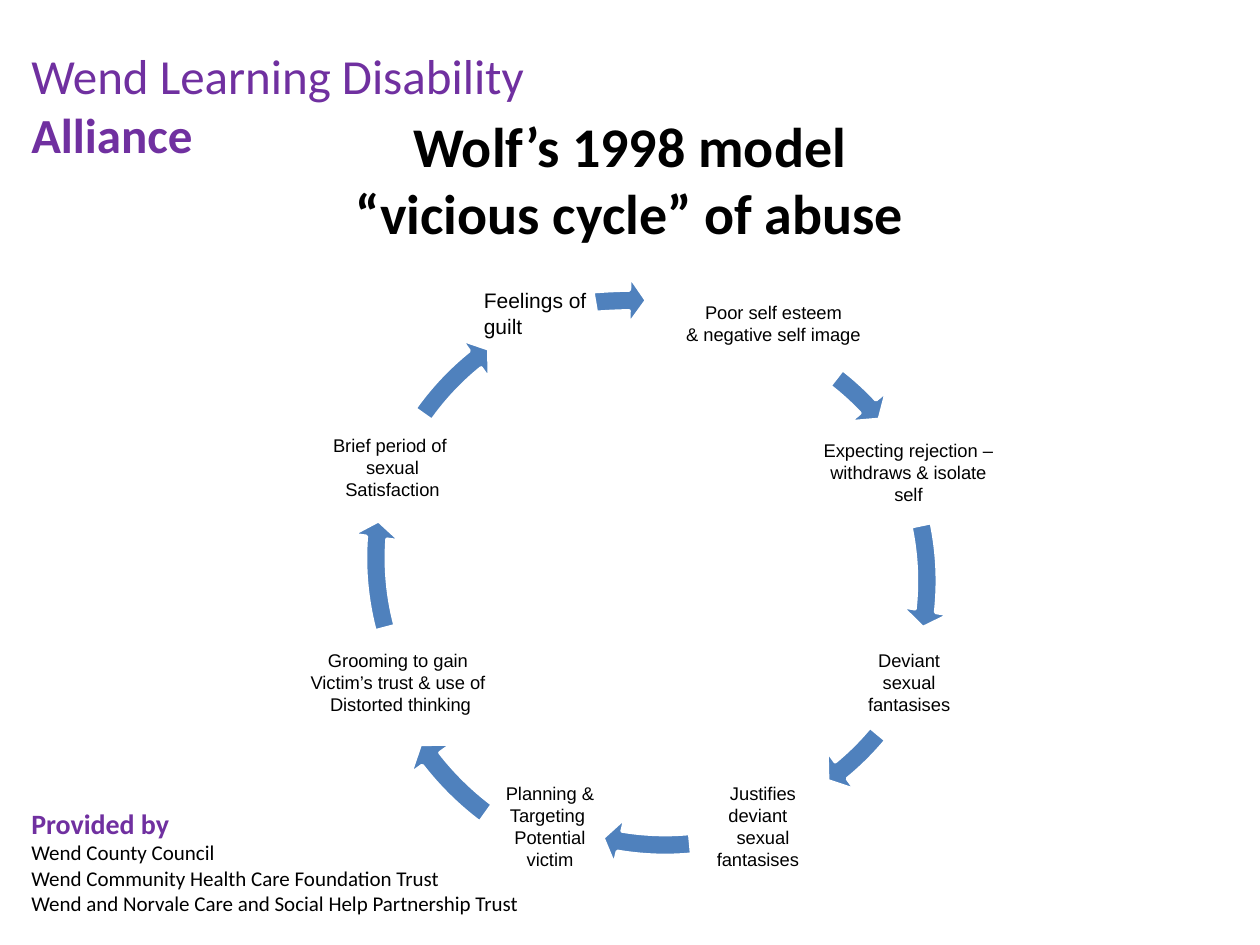
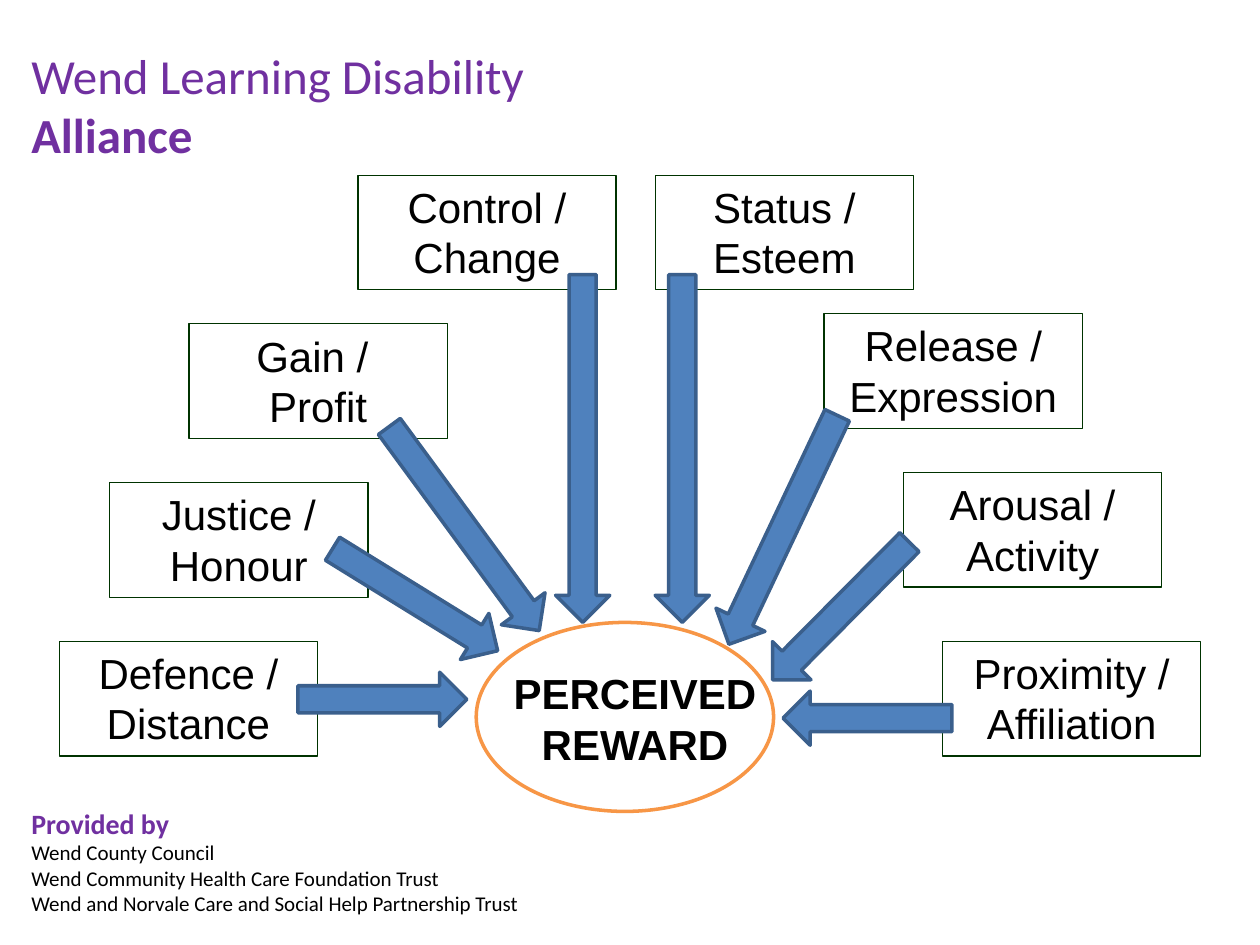
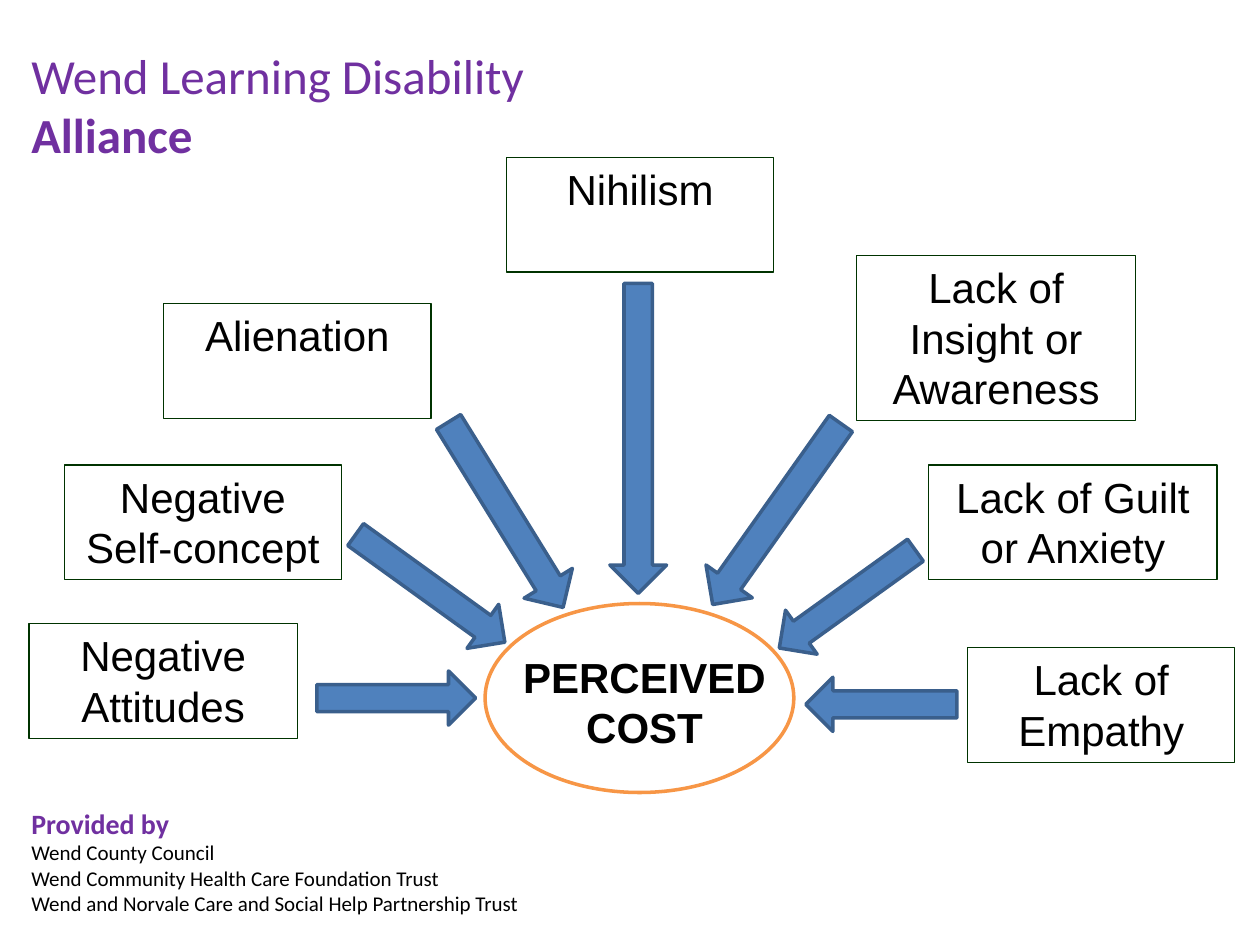
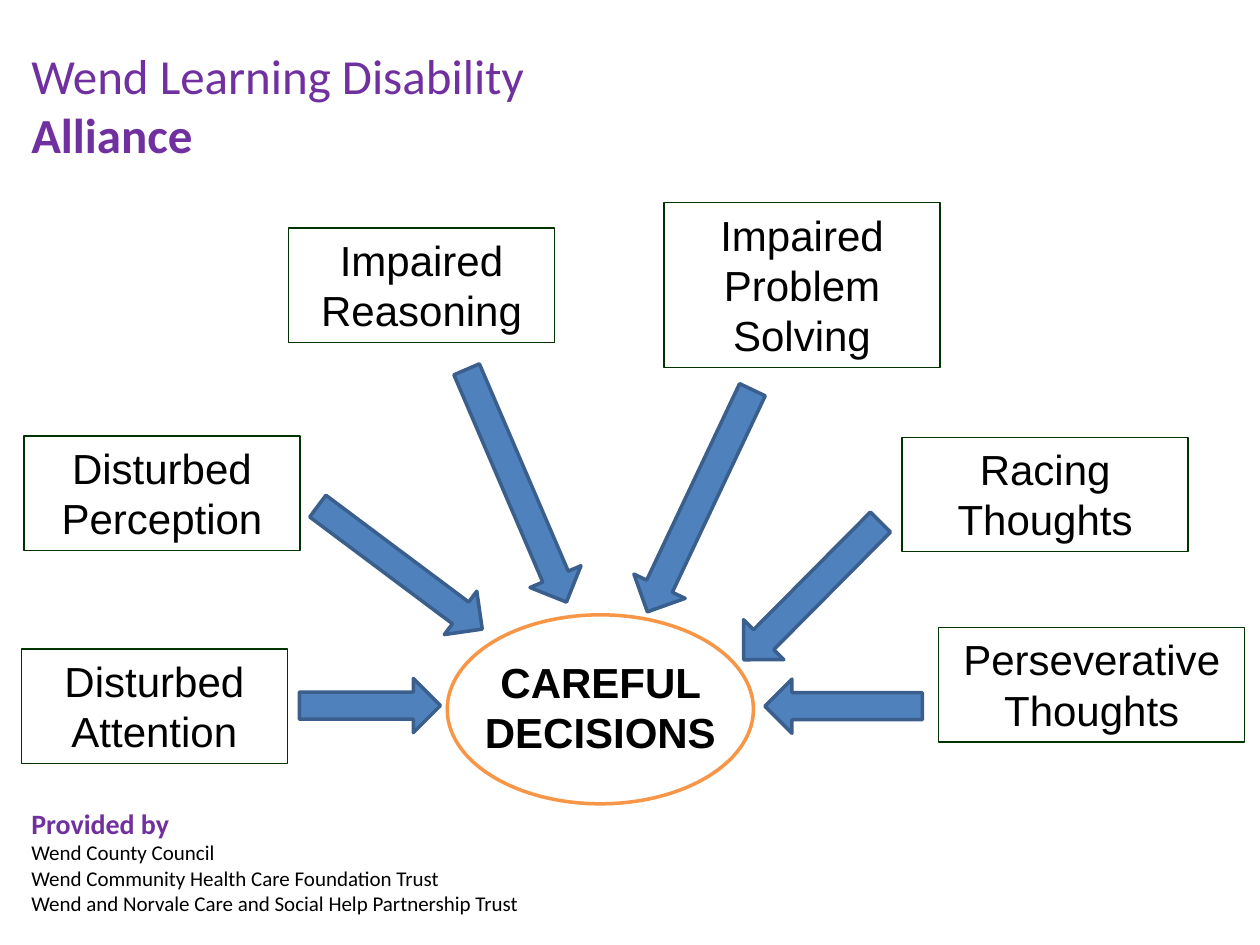
from dataclasses import dataclass

from pptx import Presentation
from pptx.dml.color import RGBColor
from pptx.enum.shapes import MSO_SHAPE
from pptx.enum.text import MSO_ANCHOR, MSO_AUTO_SIZE, PP_ALIGN
from pptx.presentation import Presentation as Deck
from pptx.shapes.autoshape import Shape
from pptx.slide import Slide
from pptx.text.text import TextFrame, _Paragraph
from pptx.util import Inches, Pt

LEFT, CENTER = PP_ALIGN.LEFT, PP_ALIGN.CENTER
TOP, MIDDLE = MSO_ANCHOR.TOP, MSO_ANCHOR.MIDDLE
NO_AUTOFIT = MSO_AUTO_SIZE.NONE
RECTANGLE, OVAL = MSO_SHAPE.RECTANGLE, MSO_SHAPE.OVAL
DOWN_ARROW, CIRCULAR_ARROW = MSO_SHAPE.DOWN_ARROW, MSO_SHAPE.CIRCULAR_ARROW

HEADING_FONT, BODY_FONT = "Calibri", "Arial"
PURPLE, BLACK, WHITE = "7030A0", "000000", "FFFFFF"
BLUE, DARK_BLUE = "4F81BD", "3A5F8C"
GREEN, ORANGE = "003300", "F79646"

TITLE_ONLY, BLANK = 5, 6
PROVIDERS = (
    "Wend County Council",
    "Wend Community Health Care Foundation Trust",
    "Wend and Norvale Care and Social Help Partnership Trust",
)


@dataclass(frozen=True)
class Step:
    """One stage of the cycle; each line is a paragraph."""
    lines: tuple[str, ...]
    left: float
    top: float
    width: float
    height: float = 0.85
    size: float = 10.5
    align: PP_ALIGN = CENTER


@dataclass(frozen=True)
class CycleArrow:
    """Arc whose head and tail angles are in adjustment units (0.6 per degree)."""
    left: float
    top: float
    head: float
    tail: float
    width: float = 4.72
    height: float = 4.72


@dataclass(frozen=True)
class Factor:
    lines: tuple[str, ...]
    left: float
    top: float
    width: float
    height: float = 0.91


@dataclass(frozen=True)
class Arrow:
    """Down arrow, turned clockwise about its middle."""
    left: float
    top: float
    length: float
    rotation: float = 0
    width: float = 0.43


@dataclass(frozen=True)
class Hub:
    """Central outcome: an ellipse and a label laid over it."""
    text: str
    label_left: float
    label_top: float
    label_width: float
    left: float
    top: float
    width: float


@dataclass(frozen=True)
class Diagram:
    hub: Hub
    factors: tuple[Factor, ...]
    arrows: tuple[Arrow, ...]


STEPS = (
    Step(("Poor self esteem ", "& negative self image "), 5.26, 2.14, 1.8),
    Step(("Expecting rejection – withdraws & isolate self",), 6.47, 3.32, 1.48),
    Step(("Deviant sexual fantasises",), 6.79, 4.99, 0.85),
    Step((" Justifies deviant ", " sexual fantasises "), 5.49, 6.13, 1.09),
    Step(("Planning &", "Targeting ", "Potential", "victim"), 3.94, 6.13, 0.85),
    Step(("Grooming to gain ", "Victim’s trust & use of ", "Distorted thinking"),
         2.41, 4.99, 1.54),
    Step(("Brief period of ", "sexual", "Satisfaction"), 2.27, 3.28, 1.69),
    Step(("Feelings of guilt",), 3.82, 2.27, 0.9, 0.43, 12, LEFT),
)
CYCLE_ARROWS = (
    CycleArrow(2.95, 2.35, 190.06, 184.66),
    CycleArrow(2.83, 2.25, 3.75, 208.88),
    CycleArrow(2.94, 2.08, 30.33, 23.8),
    CycleArrow(2.92, 2.18, 59.76, 50.8),
    CycleArrow(2.72, 2.02, 84.42, 75.29, 4.97, 5.09),
    CycleArrow(2.79, 2.07, 110.57, 99.07),
    CycleArrow(2.77, 2.18, 138.69, 129.14),
    CycleArrow(1.63, 2.19, 160.56, 156.21, 6.91),
)

DIAGRAMS = (
    Diagram(
        Hub("PERCEIVED REWARD", 3.94, 5.25, 2.2, 3.78, 4.94, 2.36),
        (
            Factor(("Defence / Distance",), 0.47, 5.09, 2.05),
            Factor(("Justice / Honour",), 0.87, 3.83, 2.05),
            Factor(("Gain / ", "Profit"), 1.5, 2.57, 2.05),
            Factor(("Control / Change",), 2.84, 1.39, 2.05),
            Factor(("Status / Esteem",), 5.2, 1.39, 2.05),
            Factor(("Release / Expression",), 6.54, 2.49, 2.05),
            Factor(("Arousal / Activity",), 7.17, 3.75, 2.05),
            Factor(("Proximity / Affiliation",), 7.48, 5.09, 2.05),
        ),
        (
            Arrow(2.82, 4.88, 1.34, 270),
            Arrow(3.08, 3.99, 1.54, 301.7),
            Arrow(3.47, 3.19, 2.01, 323.7),
            Arrow(4.41, 2.18, 2.76),
            Arrow(5.2, 2.18, 2.76),
            Arrow(6, 3.2, 2.01, 25.3),
            Arrow(6.46, 4.08, 1.54, 44.8),
            Arrow(6.67, 5.03, 1.34, 90),
        ),
    ),
    Diagram(
        Hub("PERCEIVED COST", 3.92, 5.12, 2.39, 3.85, 4.79, 2.45),
        (
            Factor(("Negative Attitudes",), 0.23, 4.95, 2.13),
            Factor(("Negative Self-concept",), 0.51, 3.69, 2.2),
            Factor(("Alienation",), 1.3, 2.41, 2.12),
            Factor(("Nihilism",), 4.02, 1.25, 2.12),
            Factor(("Lack of Insight or Awareness",), 6.8, 2.03, 2.21, 1.31),
            Factor(("Lack of Guilt or Anxiety",), 7.37, 3.69, 2.29),
            Factor(("Lack of Empathy",), 7.68, 5.14, 2.12),
        ),
        (
            Arrow(2.93, 4.91, 1.26, 270),
            Arrow(3.2, 3.94, 1.46, 305.8),
            Arrow(3.79, 3.22, 1.73, 328.3, 0.45),
            Arrow(4.84, 2.25, 2.46, 0, 0.45),
            Arrow(5.94, 3.2, 1.76, 35.3, 0.45),
            Arrow(6.51, 4.09, 1.33, 54.3),
            Arrow(6.78, 4.99, 1.2, 90),
        ),
    ),
    Diagram(
        Hub("CAREFUL DECISIONS", 3.63, 5.16, 2.27, 3.55, 4.88, 2.43),
        (
            Factor(("Disturbed Attention",), 0.17, 5.15, 2.11),
            Factor(("Disturbed Perception",), 0.19, 3.46, 2.19),
            Factor(("Impaired Reasoning",), 2.29, 1.81, 2.11),
            Factor(("Impaired Problem Solving",), 5.27, 1.61, 2.19, 1.31),
            Factor(("Racing Thoughts",), 7.16, 3.47, 2.27),
            Factor(("Perseverative Thoughts",), 7.45, 4.98, 2.43),
        ),
        (
            Arrow(2.72, 5.04, 1.12, 270),
            Arrow(2.96, 3.69, 1.63, 306.8),
            Arrow(3.88, 2.85, 2.01, 336.8, 0.44),
            Arrow(5.33, 3, 1.95, 25.3, 0.45),
            Arrow(6.22, 3.92, 1.54, 44.8, 0.45),
            Arrow(6.48, 4.98, 1.25, 90),
        ),
    ),
)


def rgb(value: str) -> RGBColor:
    return RGBColor.from_string(value)


def add_run(p: _Paragraph, text: str, size: float, color: str = BLACK,
            bold: bool = False, font: str = BODY_FONT) -> None:
    r = p.add_run()
    r.text = text
    r.font.name, r.font.size, r.font.bold = font, Pt(size), bold
    r.font.color.rgb = rgb(color)


def add_lines(tf: TextFrame, lines: tuple[str, ...], size: float,
              bold: bool = False, align: PP_ALIGN = CENTER) -> None:
    for i, line in enumerate(lines):
        p = tf.add_paragraph() if i else tf.paragraphs[0]
        p.alignment = align
        add_run(p, line, size, bold=bold)


def add_textbox(slide: Slide, left: float, top: float,
                width: float, height: float) -> Shape:
    sp = slide.shapes.add_textbox(Inches(left), Inches(top), Inches(width), Inches(height))
    sp.text_frame.word_wrap = True
    return sp


def add_outlined(slide: Slide, kind: MSO_SHAPE, left: float, top: float, width: float,
                 height: float, line: str, weight: float, fill: str = "") -> Shape:
    """Add a flat preset shape, hollow unless a fill is given."""
    sp = slide.shapes.add_shape(kind, Inches(left), Inches(top), Inches(width), Inches(height))
    sp.shadow.inherit = False
    sp.line.color.rgb = rgb(line)
    sp.line.width = Pt(weight)
    if fill:
        sp.fill.solid()
        sp.fill.fore_color.rgb = rgb(fill)
    else:
        sp.fill.background()
    return sp


def move_to_master(prs: Deck, sp: Shape) -> None:
    shapes = prs.slide_master.shapes
    sp.element.nvSpPr.cNvPr.set("id", str(len(shapes) + 2))
    shapes.element.append(sp.element)


def brand_master(prs: Deck, slide: Slide) -> None:
    """Put the alliance name and provider list on the master, by way of a slide."""
    header = add_textbox(slide, 0.15, 0.31, 5.43, 0.57)
    p = header.text_frame.paragraphs[0]
    add_run(p, "Wend Learning Disability ", 28, PURPLE, font=HEADING_FONT)
    add_run(p, "Alliance", 28, PURPLE, True, HEADING_FONT)

    footer = add_textbox(slide, 0.15, 6.35, 9.13, 1.01)
    tf = footer.text_frame
    add_run(tf.paragraphs[0], "Provided by", 16, PURPLE, True, HEADING_FONT)
    for provider in PROVIDERS:
        add_run(tf.add_paragraph(), provider, 12, font=HEADING_FONT)

    for sp in (header, footer):
        move_to_master(prs, sp)


def add_title(slide: Slide, lines: tuple[str, ...]) -> None:
    title = slide.shapes.title
    title.left, title.top = Inches(0), Inches(0.79)
    title.width, title.height = Inches(10), Inches(1.25)
    tf = title.text_frame
    tf.auto_size, tf.vertical_anchor = NO_AUTOFIT, MIDDLE
    p = tf.paragraphs[0]
    p.alignment = CENTER
    for i, line in enumerate(lines):
        if i:
            p.add_line_break()
        add_run(p, line, 32, bold=True, font=HEADING_FONT)


def add_step(slide: Slide, step: Step) -> None:
    tf = add_textbox(slide, step.left, step.top, step.width, step.height).text_frame
    tf.vertical_anchor = MIDDLE
    tf.margin_left = tf.margin_right = tf.margin_top = tf.margin_bottom = Inches(0.02)
    add_lines(tf, step.lines, step.size, align=step.align)


def add_cycle_arrow(slide: Slide, arrow: CycleArrow) -> None:
    sp = add_outlined(slide, CIRCULAR_ARROW, arrow.left, arrow.top,
                      arrow.width, arrow.height, WHITE, 2, BLUE)
    for i, value in enumerate((0.035, 2.17, arrow.head, arrow.tail, 0.041)):
        sp.adjustments[i] = value


def add_factor(slide: Slide, factor: Factor) -> None:
    sp = add_outlined(slide, RECTANGLE, factor.left, factor.top,
                      factor.width, factor.height, GREEN, 0.75)
    tf = sp.text_frame
    tf.word_wrap, tf.vertical_anchor = True, TOP
    add_lines(tf, factor.lines, 24)


def add_hub(slide: Slide, hub: Hub) -> None:
    label = add_textbox(slide, hub.label_left, hub.label_top, hub.label_width, 0.91)
    add_lines(label.text_frame, (hub.text,), 24, bold=True)
    add_outlined(slide, OVAL, hub.left, hub.top, hub.width, 1.5, ORANGE, 2)


def add_arrow(slide: Slide, arrow: Arrow) -> None:
    sp = add_outlined(slide, DOWN_ARROW, arrow.left, arrow.top,
                      arrow.width, arrow.length, DARK_BLUE, 2, BLUE)
    sp.rotation = arrow.rotation


def add_diagram(slide: Slide, diagram: Diagram) -> None:
    for factor in diagram.factors:
        add_factor(slide, factor)
    add_hub(slide, diagram.hub)
    for arrow in diagram.arrows:
        add_arrow(slide, arrow)


def main() -> None:
    prs = Presentation()
    prs.slide_width, prs.slide_height = Inches(10), Inches(7.5)

    cycle = prs.slides.add_slide(prs.slide_layouts[TITLE_ONLY])
    brand_master(prs, cycle)
    add_title(cycle, ("Wolf’s 1998 model", "“vicious cycle” of abuse"))
    for step, arrow in zip(STEPS, CYCLE_ARROWS):
        add_step(cycle, step)
        add_cycle_arrow(cycle, arrow)

    for diagram in DIAGRAMS:
        add_diagram(prs.slides.add_slide(prs.slide_layouts[BLANK]), diagram)

    prs.save("out.pptx")


if __name__ == "__main__":
    main()
